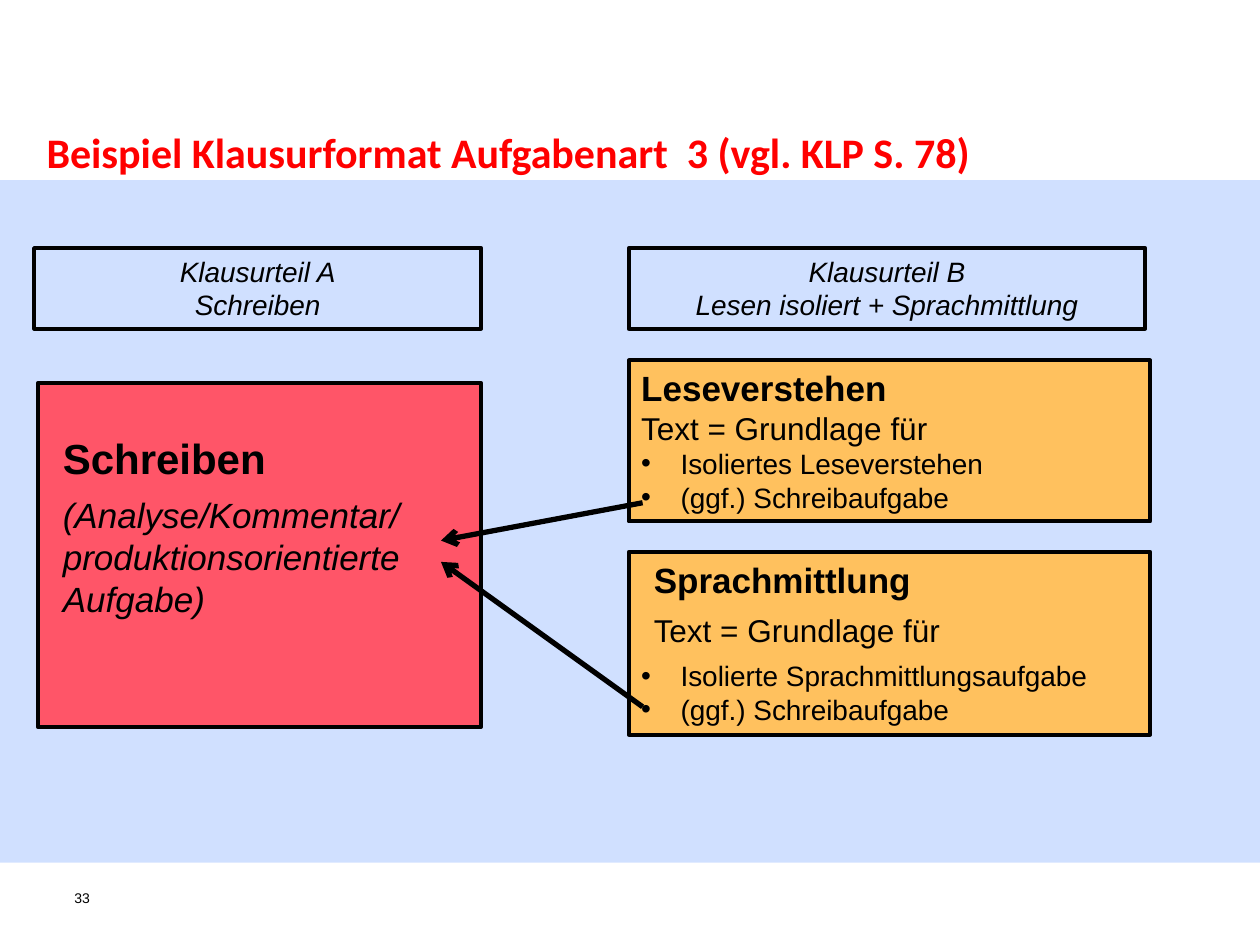
"""Build the slide on the exam format for task type 3."""
from lxml import etree
from pptx import Presentation
from pptx.dml.color import RGBColor
from pptx.enum import shapes, text
from pptx.oxml import ns
from pptx.util import Pt

BLACK, RED, PINK, ORANGE, BLUE = "000000", "FF0000", "FF5568", "FFC15E", "6699FF"
LEFT_X, RIGHT_X, HEADER_Y, HEADER_H, CARD_W = 19.5, 359.3, 141.8, 46, 298
BULLET_INDENT, TEXT_INDENT = 22.5, 7.2

TITLE = "Beispiel Klausurformat Aufgabenart  3 (vgl. KLP S. 78)"
HEADERS = [
    (LEFT_X, 255.5, ["Klausurteil A", "Schreiben"]),
    (RIGHT_X, 295.2, ["Klausurteil B", "Lesen isoliert + Sprachmittlung"]),
]
CARDS = [
    ((RIGHT_X, 206, CARD_W, 92), ORANGE, 3.6, [
        ("Leseverstehen", 20, "bold", "plain"),
        ("Text = Grundlage für", 18, "", "plain"),
        ("Isoliertes Leseverstehen", 16, "", "bullet"),
        ("(ggf.) Schreibaufgabe", 16, "", "bullet"),
    ]),
    ((21.6, 218.9, 253.4, 196.4), PINK, 28, [
        ("Schreiben", 24, "bold", "indent"),
        ("(Analyse/Kommentar/ produktionsorientierte Aufgabe)", 20, "italic", "indent"),
    ]),
    ((RIGHT_X, 315.4, CARD_W, 104.4), ORANGE, 3.6, [
        ("Sprachmittlung", 20, "bold", "indent"),
        ("Text = Grundlage für", 18, "", "indent"),
        ("Isolierte Sprachmittlungsaufgabe", 16, "", "bullet"),
        ("(ggf.) Schreibaufgabe", 16, "", "bullet"),
    ]),
]
ARROWS = [(367.2, 287.3, 252, 308.9), (367.2, 403.9, 252, 321.1)]


def color(value):
    return RGBColor.from_string(value)


def add_child(parent, tag, **attributes):
    return etree.SubElement(parent, ns.qn(tag), attributes)


def add_rect(page, place, fill=None, outlined=True):
    box = page.shapes.add_shape(shapes.MSO_SHAPE.RECTANGLE, *map(Pt, place))
    box.shadow.inherit = False
    if fill:
        box.fill.solid()
        box.fill.fore_color.rgb = color(fill)
    else:
        box.fill.background()
    if outlined:
        box.line.color.rgb = color(BLACK)
        box.line.width = Pt(2.25)
    else:
        box.line.fill.background()
    return box


def set_frame(box, insets):
    frame = box.text_frame
    frame.word_wrap = True
    frame.vertical_anchor = text.MSO_ANCHOR.TOP
    frame.margin_left, frame.margin_top, frame.margin_right, frame.margin_bottom = map(Pt, insets)


def write(box, lines, align=text.PP_ALIGN.LEFT, font="Arial", ink=BLACK):
    frame = box.text_frame
    for index, (words, size, style, kind) in enumerate(lines):
        para = frame.add_paragraph() if index else frame.paragraphs[0]
        para.text = words
        para.alignment = align
        if kind == "indent":
            para.space_after = Pt(6)
            para._p.get_or_add_pPr().set("marL", str(Pt(TEXT_INDENT)))
        elif kind == "bullet":
            settings = para._p.get_or_add_pPr()
            settings.set("marL", str(Pt(BULLET_INDENT)))
            settings.set("indent", str(-Pt(BULLET_INDENT)))
            add_child(settings, "a:buFont", typeface="Arial")
            add_child(settings, "a:buChar", char="•")
        para.font.name = font
        para.font.size = Pt(size)
        para.font.bold = style == "bold"
        para.font.italic = style == "italic"
        para.font.color.rgb = color(ink)


def add_label(page, place, insets, line, **look):
    box = page.shapes.add_textbox(*map(Pt, place))
    set_frame(box, insets)
    write(box, [line], **look)


def add_arrow(page, ends):
    arrow = page.shapes.add_connector(shapes.MSO_CONNECTOR.STRAIGHT, *map(Pt, ends))
    arrow.line.color.rgb = color(BLACK)
    arrow.line.width = Pt(3)
    add_child(arrow.line._get_or_add_ln(), "a:tailEnd", type="arrow")
    add_child(arrow._element.spPr, "a:effectLst")


def main():
    deck = Presentation()
    deck.slide_width, deck.slide_height = Pt(720), Pt(540)
    page = deck.slides.add_slide(deck.slide_layouts[6])

    band = add_rect(page, (0, 103, 720, 390), BLUE, outlined=False)
    tint = band._element.spPr.find(".//" + ns.qn("a:srgbClr"))
    add_child(tint, "a:alpha", val="30000")

    add_label(page, (42.5, 508.3, 23, 26.6), (0, 0, 0, 0), ("33", 8, "", "plain"))
    add_label(page, (19.5, 60.5, 694.8, 43.9), (7.2, 11.5, 7.2, 3.6),
              (TITLE, 24, "bold", "plain"), font="Calibri", ink=RED)

    for place, fill, top_inset, lines in CARDS:
        card = add_rect(page, place, fill)
        set_frame(card, (7.2, top_inset, 7.2, 3.6))
        write(card, lines)
    for ends in ARROWS:
        add_arrow(page, ends)
    for left, width, lines in HEADERS:
        header = add_rect(page, (left, HEADER_Y, width, HEADER_H))
        set_frame(header, (7.2, 3.6, 7.2, 3.6))
        write(header, [(words, 16, "italic", "plain") for words in lines],
              align=text.PP_ALIGN.CENTER)

    deck.save("out.pptx")


if __name__ == "__main__":
    main()
